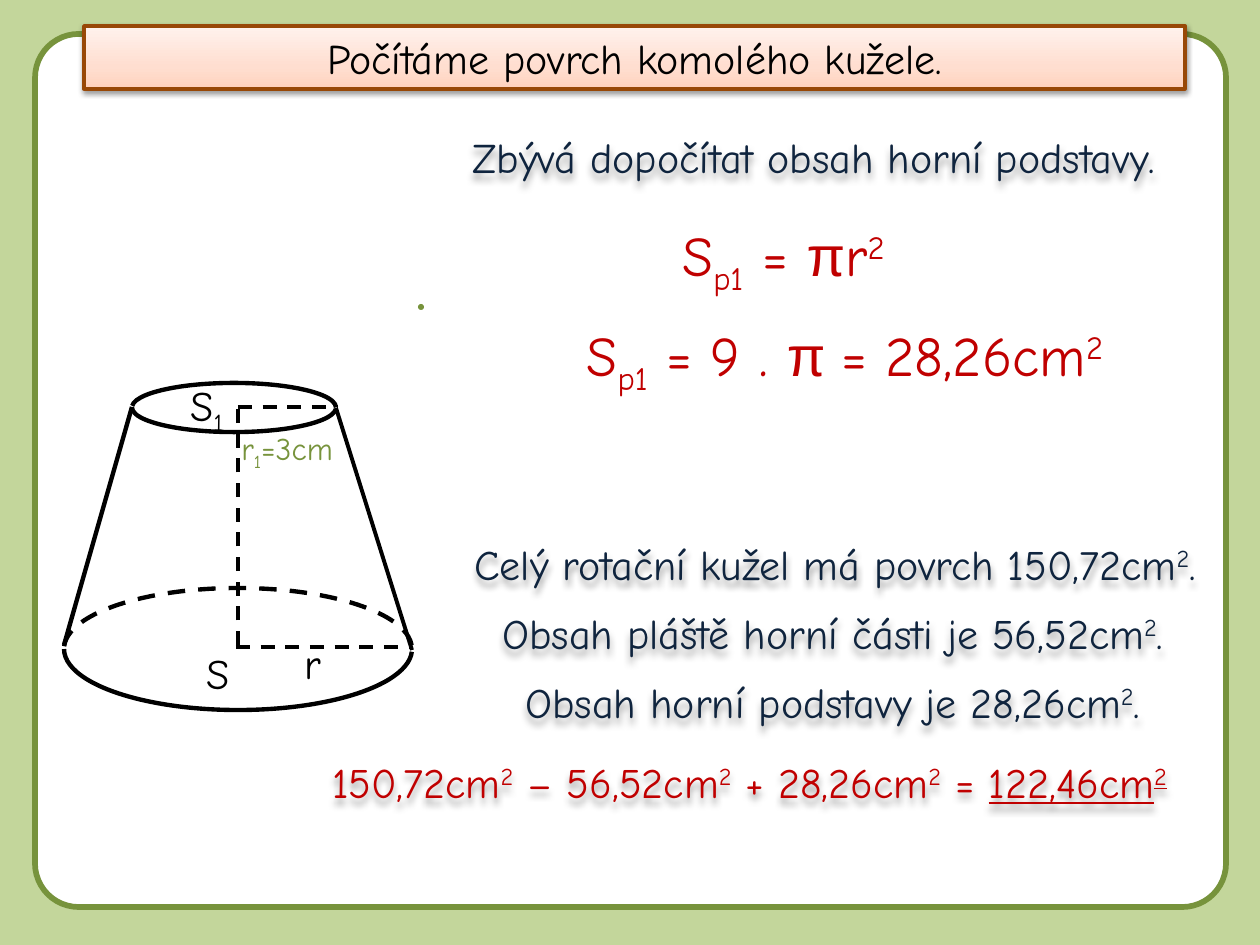
from dataclasses import dataclass

import pptx
import pptx.dml.color
import pptx.enum.dml
import pptx.enum.shapes
import pptx.enum.text
import pptx.util
from copy import deepcopy
from lxml import etree
from pptx.oxml.ns import qn

PX = 914400 / 126
SHAPE = pptx.enum.shapes.MSO_SHAPE
CENTER = pptx.enum.text.PP_ALIGN.CENTER
LEFT = pptx.enum.text.PP_ALIGN.LEFT
DASH = pptx.enum.dml.MSO_LINE.DASH
BLACK, NAVY, RED, GREEN, WHITE = "000000", "0F243E", "C00000", "77933C", "FFFFFF"
FONT = "Comic Neue"


@dataclass
class Span:
    text: str
    baseline: int = 0
    underline: bool = False
    font: str = FONT


@dataclass
class Label:
    frame: tuple[int, int, int, int]
    spans: list[Span]
    color: str = BLACK
    size: int = 24
    align: int = CENTER
    fill: str | None = None
    shadow: bool = False


@dataclass
class Edge:
    start: tuple[int, int]
    end: tuple[int, int]
    width: float = 2
    dashed: bool = True


def emu(*lengths: int) -> list[int]:
    return [round(length * PX) for length in lengths]


def rgb(color: str) -> pptx.dml.color.RGBColor:
    return pptx.dml.color.RGBColor.from_string(color)


def style_line(line, color: str, width: float, dashed: bool = False) -> None:
    line.color.rgb = rgb(color)
    line.width = pptx.util.Pt(width)
    if dashed:
        line.dash_style = DASH


def add_shadow(box, blur: float, distance: float, alpha: int) -> None:
    box.shadow.inherit = False
    effects = box._element.spPr.find(qn("a:effectLst"))
    outer = etree.SubElement(
        effects, qn("a:outerShdw"), blurRad=str(pptx.util.Pt(blur)),
        dist=str(pptx.util.Pt(distance)), dir="5400000", rotWithShape="0")
    tint = etree.SubElement(outer, qn("a:srgbClr"), val=BLACK)
    etree.SubElement(tint, qn("a:alpha"), val=str(alpha * 1000))


def add_label(page, label: Label):
    box = page.shapes.add_textbox(*emu(*label.frame))
    if label.fill:
        box.fill.solid()
        box.fill.fore_color.rgb = rgb(label.fill)
    if label.shadow:
        add_shadow(box, 4, 3, 40)
    box.text_frame.word_wrap = True
    para = box.text_frame.paragraphs[0]
    para.alignment = label.align
    para.font.size = pptx.util.Pt(label.size)
    para.font.color.rgb = rgb(label.color)
    para.font.name = FONT
    for span in label.spans:
        run = para.add_run()
        run.text = span.text
        if span.font != FONT:
            run.font.name = span.font
        if span.underline:
            run.font.underline = True
        if span.baseline:
            run.font._element.set("baseline", str(span.baseline * 1000))
    return box


def add_solid(page, kind, frame: tuple[int, int, int, int], fill: str):
    box = page.shapes.add_shape(kind, *emu(*frame))
    box.shadow.inherit = False
    box.fill.solid()
    box.fill.fore_color.rgb = rgb(fill)
    box.line.fill.background()
    return box


def add_ring(page, frame: tuple[int, int, int, int], dashed_back: bool) -> None:
    group = page.shapes.add_group_shape()
    for rotation, dashed in ((0, dashed_back), (180, False)):
        arc = group.shapes.add_shape(SHAPE.ARC, *emu(*frame))
        arc.adjustments[0] = 108.54
        arc.adjustments[1] = 0
        arc.rotation = rotation
        arc.shadow.inherit = False
        arc.fill.background()
        style_line(arc.line, BLACK, 2.5, dashed)


def add_edge(page, edge: Edge) -> None:
    line = page.shapes.add_connector(
        pptx.enum.shapes.MSO_CONNECTOR.STRAIGHT, *emu(*edge.start, *edge.end))
    style_line(line.line, BLACK, edge.width, edge.dashed)
    etree.SubElement(line._element.spPr, qn("a:effectLst"))


def add_title(page) -> None:
    title = add_label(page, Label((84, 26, 1101, 63),
                                  [Span("Počítáme povrch komolého kužele.")]))
    title.fill.gradient()
    stops = title._element.spPr.find(".//" + qn("a:gsLst"))
    stops.append(deepcopy(stops[0]))
    colors = ((0, "FFD2BD"), (0.35, "FFDED0"), (1, "FFF2ED"))
    for stop, (position, color) in zip(title.fill.gradient_stops, colors):
        stop.position = position
        stop.color.rgb = rgb(color)
    title.fill.gradient_angle = 90
    style_line(title.line, "984807", 2)
    add_shadow(title, 3.1, 1.6, 38)


SQUARED = Span("2", 30)
PI = Span("π", font="Arial")
S_P1 = [Span("S"), Span("p1", -25)]

CONE_LABELS = [
    Label((292, 631, 129, 63), [Span("r")], align=LEFT),
    Label((178, 373, 79, 63), [Span("S"), Span("1", -25)], align=LEFT),
    Label((194, 641, 79, 63), [Span("S")], align=LEFT),
    Label((229, 423, 198, 50), [Span("r"), Span("1", -25), Span("=3cm")],
          GREEN, 18, LEFT),
]
EDGES = [
    Edge((236, 647), (410, 647)),
    Edge((238, 645), (238, 407)),
    Edge((412, 650), (336, 408), 2.25, False),
    Edge((64, 645), (132, 407), 2.5, False),
    Edge((238, 407), (338, 407)),
]
FORMULAS = [
    Label((461, 214, 645, 81), [*S_P1, Span(" = "), PI, Span("r"), SQUARED],
          RED, 32, fill=WHITE),
    Label((525, 314, 640, 81),
          [*S_P1, Span(" = 9 . "), PI, Span(" ", font="Arial"),
           Span("= 28,26cm"), SQUARED],
          RED, 32, fill=WHITE),
]
STATEMENTS = [
    Label((422, 125, 784, 63), [Span("Zbývá dopočítat obsah horní podstavy.")],
          NAVY, shadow=True),
    *(Label((left, 532 + 69 * row, width, 63), [Span(text), SQUARED, Span(".")],
            NAVY, shadow=True)
      for row, (left, width, text) in enumerate((
          (410, 850, "Celý rotační kužel má povrch 150,72cm"),
          (441, 784, "Obsah pláště horní části je 56,52cm"),
          (441, 784, "Obsah horní podstavy je 28,26cm")))),
    Label((273, 750, 953, 63),
          [Span("150,72cm"), SQUARED, Span(" – 56,52cm"), SQUARED,
           Span(" + 28,26cm"), SQUARED, Span(" = "),
           Span("122,46cm", underline=True), Span("2", 30, True)],
          RED, shadow=True),
]


def main() -> None:
    deck = pptx.Presentation()
    deck.slide_width, deck.slide_height = emu(1260, 945)
    page = deck.slides.add_slide(deck.slide_layouts[6])
    page.background.fill.solid()
    page.background.fill.fore_color.rgb = rgb("C3D69B")

    # Rounded panel
    panel = add_solid(page, SHAPE.ROUNDED_RECTANGLE, (35, 34, 1191, 873), WHITE)
    panel.adjustments[0] = 0.05
    style_line(panel.line, GREEN, 3.25)

    # Truncated cone
    add_ring(page, (64, 588, 348, 122), True)
    add_ring(page, (132, 383, 204, 49), False)
    for edge in EDGES:
        add_edge(page, edge)

    # Texts and formulas
    for label in CONE_LABELS + FORMULAS + STATEMENTS:
        add_label(page, label)
    add_solid(page, SHAPE.OVAL, (418, 304, 6, 6), GREEN)
    add_title(page)

    deck.save("out.pptx")


if __name__ == "__main__":
    main()
